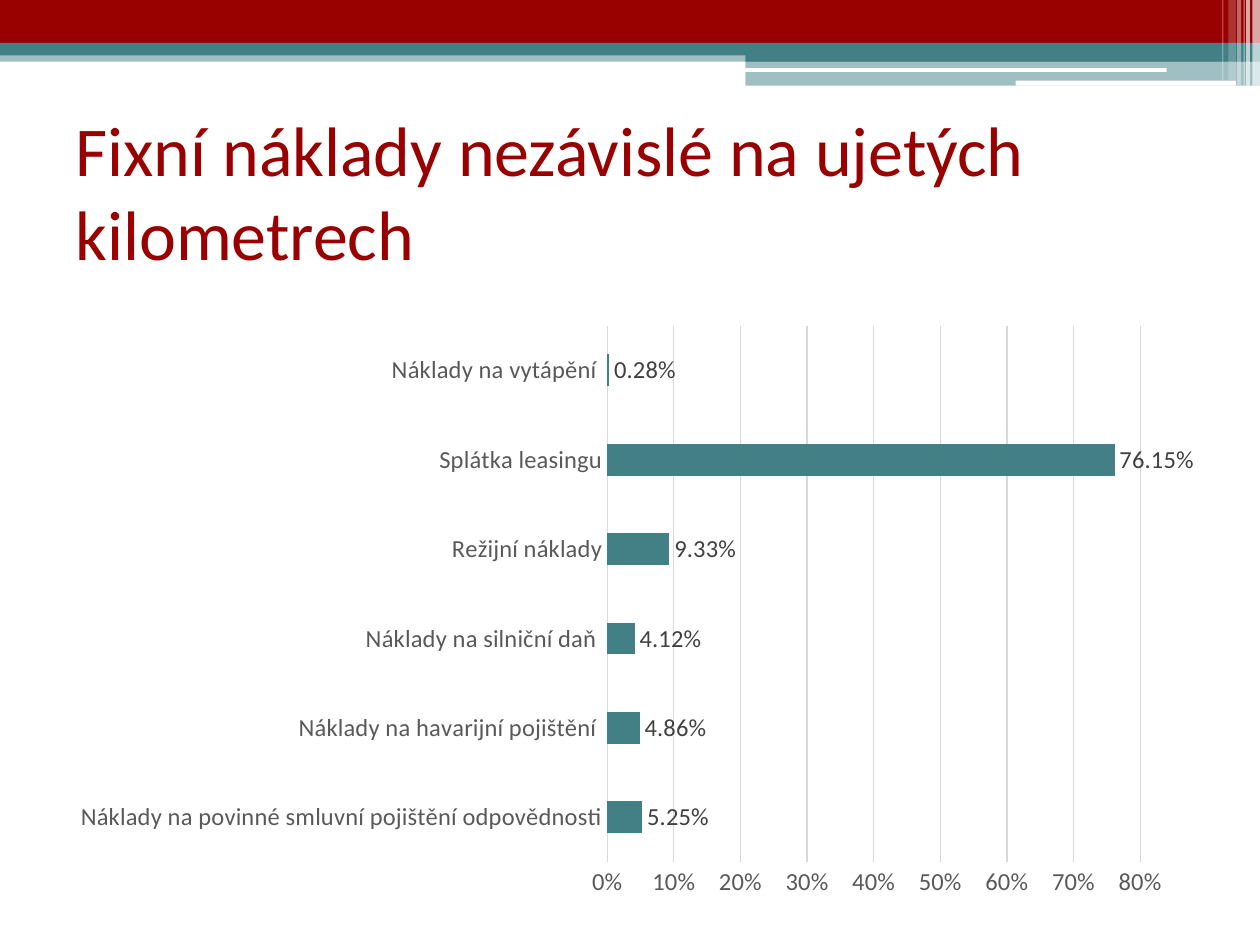
from lxml.etree import SubElement
from pptx import Presentation
from pptx.chart.data import CategoryChartData
from pptx.dml.color import RGBColor
from pptx.enum.chart import XL_CHART_TYPE, XL_LABEL_POSITION, XL_TICK_MARK
from pptx.enum.shapes import MSO_SHAPE
from pptx.enum.text import MSO_ANCHOR, PP_ALIGN
from pptx.oxml.ns import qn
from pptx.util import Pt

COLORS = {"red": "990000", "teal": "438086", "white": "FFFFFF",
          "axis": "595959", "label": "404040", "grid": "D9D9D9"}
FONT = "Calibri"
BANDS = [
    (0, 28.8, 720, 6.5, "teal", 50),
    (0, 0, 720, 24.5, "red", 100),
    (0, 24.5, 720, 7.2, "teal", 100),
    (426, 28.1, 294, 7.2, "teal", 100),
    (426, 34.6, 294, 14.4, "teal", 50),
]
PILLS = [(425.5, 38.9, 241.2, 2.2), (580.3, 46.1, 126, 2.9)]
STRIPES = [
    (715.7, 4.3, 49, 65), (712.1, 2.2, 49, 65), (710.6, 0.7, 49, 60),
    (707, 2.2, 49, 40), (702, 4.3, 46, 20), (698.4, 0.7, 46, 30),
]
COSTS = [
    ("Náklady na povinné smluvní pojištění odpovědnosti", 0.0525),
    ("Náklady na havarijní pojištění ", 0.0486),
    ("Náklady na silniční daň ", 0.0412),
    ("Režijní náklady", 0.0933),
    ("Splátka leasingu", 0.7615),
    ("Náklady na vytápění ", 0.0028),
]


def rgb(name):
    return RGBColor.from_string(COLORS[name])


def set_all(obj, **values):
    for name, value in values.items():
        setattr(obj, name, value)


def style_font(font, size, color):
    set_all(font, name=FONT, size=Pt(size), bold=False)
    font.color.rgb = rgb(color)


def add_block(s, kind, x, y, w, h, color, alpha=100):
    sp = s.shapes.add_shape(kind, Pt(x), Pt(y), Pt(w), Pt(h))
    sp.shadow.inherit = False
    sp.line.fill.background()
    sp.fill.solid()
    sp.fill.fore_color.rgb = rgb(color)
    if alpha < 100:
        clr = sp.fill._xPr.find(".//" + qn("a:srgbClr"))
        SubElement(clr, qn("a:alpha")).set("val", str(alpha * 1000))


def add_header(s, left, top):
    for x, y, w, h, color, alpha in BANDS:
        add_block(s, MSO_SHAPE.RECTANGLE, left + x, top + y, w, h, color, alpha)
    for x, y, w, h in PILLS:
        add_block(s, MSO_SHAPE.ROUNDED_RECTANGLE, left + x, top + y, w, h, "white")
    for x, w, h, alpha in STRIPES:
        add_block(s, MSO_SHAPE.RECTANGLE, left + x, top, w, h, "white", alpha)


def add_title(s, left, top, width, height, text):
    tf = s.shapes.add_textbox(Pt(left), Pt(top), Pt(width), Pt(height)).text_frame
    set_all(tf, word_wrap=True, vertical_anchor=MSO_ANCHOR.MIDDLE)
    p = tf.paragraphs[0]
    p.alignment = PP_ALIGN.LEFT
    r = p.add_run()
    r.text = text
    style_font(r.font, 40, "red")


def style_line(line, color):
    line.color.rgb = rgb(color)
    line.width = Pt(0.75)


def set_plot_area(chart, **box):
    area = chart._chartSpace.chart.plotArea
    layout = area.find(qn("c:layout"))
    if layout is None:
        layout = SubElement(area, qn("c:layout"))
        area.insert(0, layout)
    manual = SubElement(layout, qn("c:manualLayout"))
    values = {"layoutTarget": "inner", "xMode": "edge", "yMode": "edge", **box}
    for tag, value in values.items():
        SubElement(manual, qn("c:" + tag)).set("val", str(value))


def add_cost_chart(s, left, top, width, height):
    data = CategoryChartData(number_format="0.00%")
    data.categories = [name for name, _ in COSTS]
    data.add_series("Series 1", [share for _, share in COSTS])
    chart = s.shapes.add_chart(XL_CHART_TYPE.BAR_CLUSTERED, Pt(left), Pt(top),
                               Pt(width), Pt(height), data).chart
    set_all(chart, has_legend=False, has_title=False)
    style_font(chart.font, 14, "axis")
    set_plot_area(chart, x=0.48, y=0.02, w=0.47, h=0.9)

    for axis in (chart.category_axis, chart.value_axis):
        set_all(axis, major_tick_mark=XL_TICK_MARK.NONE,
                minor_tick_mark=XL_TICK_MARK.NONE)
        style_font(axis.tick_labels.font, 14, "axis")
    style_line(chart.category_axis.format.line, "grid")
    axis = chart.value_axis
    set_all(axis, minimum_scale=0, maximum_scale=0.8, major_unit=0.1,
            has_major_gridlines=True)
    set_all(axis.tick_labels, number_format="0%", number_format_is_linked=False)
    axis.format.line.fill.background()
    style_line(axis.major_gridlines.format.line, "grid")

    plot = chart.plots[0]
    set_all(plot, gap_width=182, vary_by_categories=False)
    series = plot.series[0]
    series.format.fill.solid()
    series.format.fill.fore_color.rgb = rgb("teal")
    labels = series.data_labels
    set_all(labels, show_value=True, number_format="0.00%",
            number_format_is_linked=False, position=XL_LABEL_POSITION.OUTSIDE_END)
    style_font(labels.font, 14, "label")


def main():
    prs = Presentation()
    set_all(prs, slide_width=Pt(720), slide_height=Pt(540))
    s = prs.slides.add_slide(prs.slide_layouts[6])
    add_header(s, 0, 0)
    add_title(s, 36, 67, 648, 84, "Fixní náklady nezávislé na ujetých kilometrech")
    add_cost_chart(s, 36, 179.3, 648, 340.6)
    prs.save("out.pptx")


if __name__ == "__main__":
    main()
